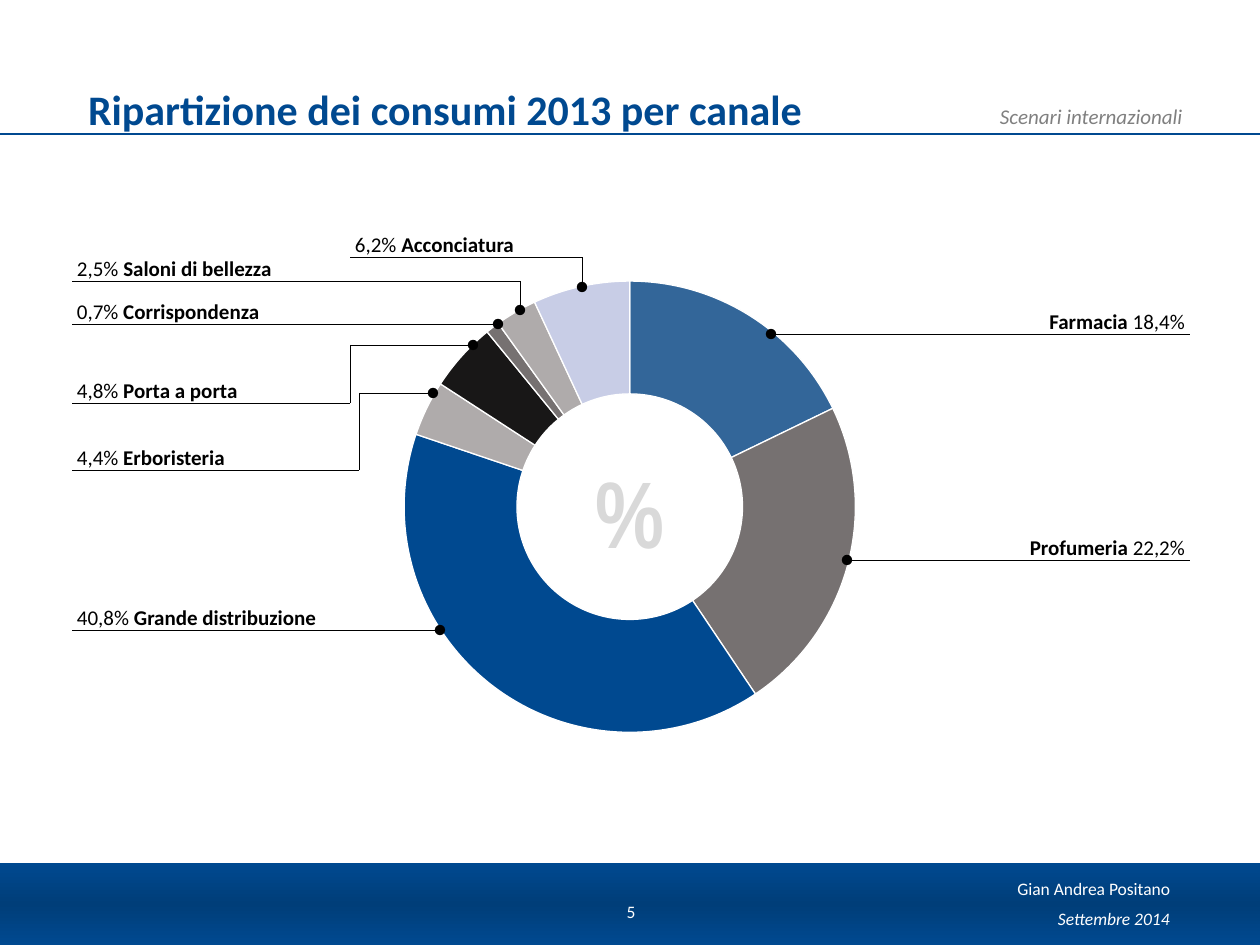
from copy import deepcopy
from itertools import pairwise

from lxml import etree
from pptx import Presentation
from pptx.chart.data import CategoryChartData
from pptx.dml.color import RGBColor
from pptx.enum.chart import XL_CHART_TYPE as ChartType
from pptx.enum.shapes import MSO_CONNECTOR as Connector, MSO_SHAPE as Preset
from pptx.enum.text import MSO_ANCHOR as Anchor, PP_ALIGN as Align
from pptx.oxml import parse_xml
from pptx.oxml.ns import nsdecls, qn
from pptx.util import Pt

PX = 914400 / 126
FONT = "Calibri"

BLUE = RGBColor(0x00, 0x49, 0x90)
DEEP_BLUE = RGBColor(0x00, 0x3E, 0x79)
STEEL = RGBColor(0x33, 0x66, 0x99)
LAVENDER = RGBColor(0xC8, 0xCD, 0xE6)
DARK_GRAY = RGBColor(0x76, 0x71, 0x71)
LIGHT_GRAY = RGBColor(0xAF, 0xAB, 0xAB)
CAPTION_GRAY = RGBColor(0x80, 0x80, 0x80)
PERCENT_GRAY = RGBColor(0xD9, 0xD9, 0xD9)
CHARCOAL = RGBColor(0x18, 0x17, 0x17)
BLACK = RGBColor(0, 0, 0)
WHITE = RGBColor(0xFF, 0xFF, 0xFF)

TITLE = "Ripartizione dei consumi 2013 per canale"

# text, box (left, top, width, height), size, colour, italic, alignment, anchor
CAPTIONS = [
    ("Settembre 2014", (990, 906, 192, 26), 10, WHITE, True, Align.RIGHT, Anchor.MIDDLE),
    ("Gian Andrea Positano", (1005, 874, 193, 39), 10, WHITE, False, Align.LEFT, Anchor.TOP),
    ("Scenari internazionali", (767, 97, 428, 38), 12, CAPTION_GRAY, True, Align.RIGHT, Anchor.TOP),
    ("5", (595, 887, 72, 50), 10, WHITE, False, Align.CENTER, Anchor.MIDDLE),
]

SLICES = [
    (18, STEEL), (23, DARK_GRAY), (40, BLUE), (4, LIGHT_GRAY),
    (5, CHARCOAL), (1, DARK_GRAY), (3, LIGHT_GRAY), (7, LAVENDER),
]

# (text, bold) runs, label width, leader points from the dot to the outer end
CALLOUTS = [
    ([("6,2% ", False), ("Acconciatura", True)], 237, [(582, 287), (582, 257), (350, 257)]),
    ([("2,5% ", False), ("Saloni di bellezza", True)], 273, [(520, 310), (520, 281), (72, 281)]),
    ([("0,7% ", False), ("Corrispondenza", True)], 237, [(498, 324), (72, 324)]),
    ([("4,8% ", False), ("Porta a porta", True)], 237, [(473, 345), (350, 345), (350, 403), (72, 403)]),
    ([("4,4% ", False), ("Erboristeria", True)], 237, [(433, 393), (359, 393), (359, 470), (72, 470)]),
    ([("40,8% ", False), ("Grande distribuzione", True)], 295, [(440, 630), (72, 630)]),
    ([("Farmacia", True), (" 18,4%", False)], 237, [(771, 334), (1190, 334)]),
    ([("Profumeria ", True), ("22,2%", False)], 237, [(847, 560), (1190, 560)]),
]
LABEL_HEIGHT = 25


def px(*lengths):
    return [round(length * PX) for length in lengths]


def set_font(font, size, color, name=FONT, bold=None, italic=None):
    font.name, font.size, font.bold, font.italic = name, Pt(size), bold, italic
    font.color.rgb = color


def add_rectangle(slide, box):
    shape = slide.shapes.add_shape(Preset.RECTANGLE, *px(*box))
    shape.shadow.inherit = False
    shape.line.fill.background()
    return shape


def add_label(slide, box, align):
    """Add a white box with text resting on its bottom edge; return its paragraph."""
    shape = add_rectangle(slide, box)
    shape.fill.solid()
    shape.fill.fore_color.rgb = WHITE
    frame = shape.text_frame
    frame.vertical_anchor = Anchor.BOTTOM
    frame.margin_left = frame.margin_right = px(5)[0]
    frame.margin_top = frame.margin_bottom = 0
    paragraph = frame.paragraphs[0]
    paragraph.alignment = align
    return paragraph


def add_line(slide, start, end, color, width, dot=False):
    line = slide.shapes.add_connector(Connector.STRAIGHT, *px(*start, *end))
    line.line.color.rgb = color
    line.line.width = Pt(width)
    properties = line._element.spPr
    if dot:
        etree.SubElement(properties.find(qn("a:ln")), qn("a:headEnd"), type="oval")
    etree.SubElement(properties, qn("a:effectLst"))


def add_footer_bar(slide):
    fill = add_rectangle(slide, (-24, 863, 1298, 82)).fill
    fill.gradient()
    fill.gradient_angle = 90
    stops = slide.shapes[-1]._element.spPr.find(".//" + qn("a:gsLst"))
    stops.insert(1, deepcopy(stops[0]))
    for stop, position, color in zip(fill.gradient_stops, (0, 0.5, 1), (BLUE, DEEP_BLUE, BLUE)):
        stop.position = position
        stop.color.rgb = color


def add_caption(slide, text, box, size, color, italic, align, anchor):
    frame = slide.shapes.add_textbox(*px(*box)).text_frame
    frame.word_wrap = True
    frame.vertical_anchor = anchor
    paragraph = frame.paragraphs[0]
    paragraph.text = text
    paragraph.alignment = align
    if anchor == Anchor.TOP and not italic:
        paragraph.line_spacing = 0.9
    set_font(paragraph.font, size, color, italic=italic)


def add_title(slide):
    title = slide.shapes.title
    title.left, title.top, title.width, title.height = px(63, 14, 1134, 120)
    frame = title.text_frame
    frame.text = TITLE
    frame.vertical_anchor = Anchor.BOTTOM
    frame.margin_left = frame.margin_right = px(25)[0]
    frame.margin_top = frame.margin_bottom = 0
    paragraph = frame.paragraphs[0]
    paragraph.alignment = Align.LEFT
    set_font(paragraph.font, 24, BLUE, bold=True)


def add_doughnut(slide):
    data = CategoryChartData()
    data.categories = [str(number) for number in range(1, len(SLICES) + 1)]
    data.add_series("Series 1", [value for value, _ in SLICES])
    chart = slide.shapes.add_chart(ChartType.DOUGHNUT, *px(295, 262, 669, 490), data).chart
    chart.has_legend = chart.has_title = False
    set_font(chart.font, 18, BLACK)
    plot = chart.plots[0]
    plot.vary_by_categories = True
    for index, (_, color) in enumerate(SLICES):
        style = plot.series[0].points[index].format
        style.fill.solid()
        style.fill.fore_color.rgb = color
        style.line.color.rgb = WHITE
        style.line.width = Pt(0.75)

    area = chart._chartSpace.find(".//" + qn("c:plotArea"))
    area.find(".//" + qn("c:holeSize")).set("val", "71")
    for old_layout in area.findall(qn("c:layout")):
        area.remove(old_layout)
    settings = [("layoutTarget", "inner"), ("xMode", "edge"), ("yMode", "edge"),
                ("x", 0.163), ("y", 0.039), ("w", 0.675), ("h", 0.921)]
    children = "".join(f'<c:{name} val="{value}"/>' for name, value in settings)
    area.insert(0, parse_xml(
        f'<c:layout {nsdecls("c")}><c:manualLayout>{children}</c:manualLayout></c:layout>'))


def add_callout(slide, runs, width, points):
    end_x, end_y = points[-1]
    on_right = end_x > points[0][0]
    left = end_x - width if on_right else end_x
    paragraph = add_label(slide, (left, end_y - LABEL_HEIGHT, width, LABEL_HEIGHT),
                          Align.RIGHT if on_right else Align.LEFT)
    set_font(paragraph.font, 12, BLACK)
    for text, bold in runs:
        run = paragraph.add_run()
        run.text = text
        run.font.bold = bold
    for index, (start, end) in enumerate(pairwise(points)):
        add_line(slide, start, end, BLACK, 0.5, dot=index == 0)


def main():
    presentation = Presentation()
    presentation.slide_width, presentation.slide_height = px(1260, 945)
    slide = presentation.slides.add_slide(presentation.slide_layouts[5])
    add_footer_bar(slide)
    add_line(slide, (-21, 134), (1269, 134), BLUE, 0.75)
    for caption in CAPTIONS:
        add_caption(slide, *caption)
    add_title(slide)
    add_doughnut(slide)
    percent = add_label(slide, (559, 452, 141, 115), Align.CENTER)
    percent.text = "%"
    set_font(percent.font, 54, PERCENT_GRAY, name="Arial Narrow", bold=True)
    for callout in CALLOUTS:
        add_callout(slide, *callout)
    presentation.save("out.pptx")


if __name__ == "__main__":
    main()
